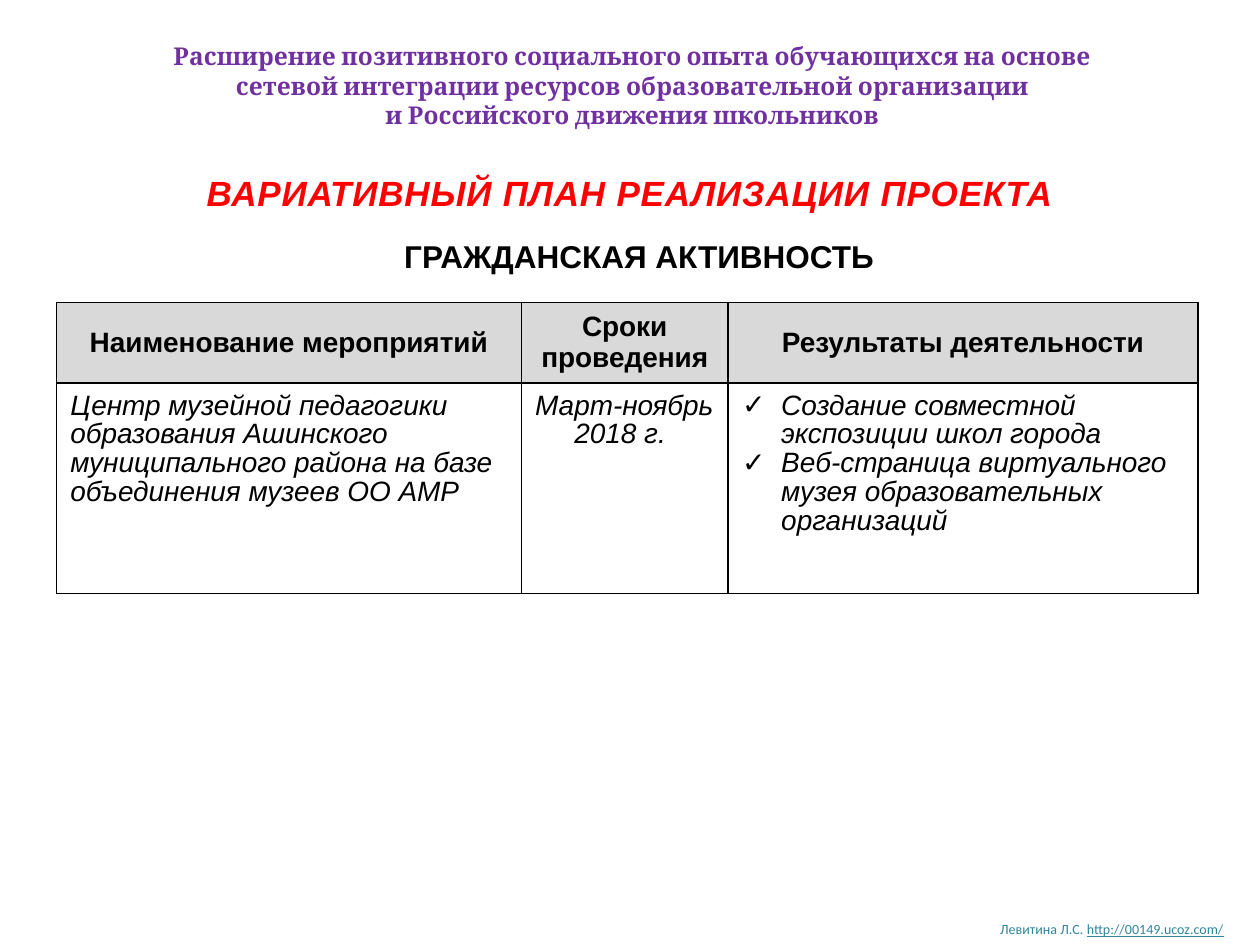
from dataclasses import dataclass, field

from lxml import etree
from pptx import Presentation
from pptx.dml.color import RGBColor
from pptx.enum.text import MSO_ANCHOR, MSO_AUTO_SIZE, PP_ALIGN
from pptx.oxml.ns import qn
from pptx.util import Cm, Pt

LEFT, MID = PP_ALIGN.LEFT, PP_ALIGN.CENTER
TOP, CENTER = MSO_ANCHOR.TOP, MSO_ANCHOR.MIDDLE
GROW = MSO_AUTO_SIZE.SHAPE_TO_FIT_TEXT
SIDES = ("a:lnL", "a:lnR", "a:lnT", "a:lnB")
BLACK, GRAY = "000000", "D9D9D9"
INDENT = 0.79


@dataclass
class Label:
    place: tuple[float, float, float, float]
    lines: list[str]
    style: dict = field(default_factory=dict)
    wrap: bool = True


@dataclass
class Entry:
    lines: list[str]
    style: dict = field(default_factory=dict)


LABELS = [
    Label((0.81, 0.71, 23.88, 2.06),
          ["Расширение позитивного социального опыта обучающихся на основе",
           "сетевой интеграции ресурсов образовательной организации",
           "и Российского движения школьников"],
          dict(size=14, face="Cambria", color="7030A0", bold=True, align=MID)),
    Label((0.89, 3.33, 23.6, 1.12),
          ["ВАРИАТИВНЫЙ ПЛАН РЕАЛИЗАЦИИ ПРОЕКТА"],
          dict(size=20, color="FF0000", bold=True, italic=True, align=MID,
               track=0.45)),
    Label((7.9, 4.65, 10.08, 1.02), ["ГРАЖДАНСКАЯ АКТИВНОСТЬ"],
          dict(size=18, bold=True), wrap=False),
]
HEADS = [Entry(["Наименование мероприятий"]),
         Entry(["Сроки", "проведения"]),
         Entry(["Результаты деятельности"])]
BODY = [
    Entry(["Центр музейной педагогики образования Ашинского "
           "муниципального района на базе объединения музеев ОО АМР"]),
    Entry(["Март-ноябрь 2018 г."], dict(hang=INDENT)),
    Entry(["Создание совместной экспозиции школ города",
           "Веб-страница виртуального музея образовательных организаций"],
          dict(hang=INDENT, mark="✓")),
]
COLS, ROWS = (9.37, 4.17, 9.47), (1.62, 4.24)


def paint(code: str) -> RGBColor:
    return RGBColor.from_string(code)


def indent(para, hang: float, mark: str) -> None:
    props = para._p.get_or_add_pPr()
    props.set("marL", str(Cm(hang)))
    props.set("indent", str(-Cm(hang)))
    if mark:
        tint = etree.SubElement(props, qn("a:buClr"))
        etree.SubElement(tint, qn("a:srgbClr"), val=BLACK)
        etree.SubElement(props, qn("a:buFont"), typeface="Arial")
        etree.SubElement(props, qn("a:buChar"), char=mark)


def add_run(para, text: str, *, size=16, face="Arial", color=BLACK,
            bold=False, italic=False, under=False, track=0.0) -> None:
    run = para.add_run()
    run.text = text
    font = run.font
    font.size, font.name = Pt(size), face
    font.bold, font.italic, font.underline = bold, italic, under
    font.color.rgb = paint(color)
    if track:
        run._r.get_or_add_rPr().set("spc", str(round(track * 100)))


def write(frame, lines: list[str], *, align=LEFT, space=1.0, hang=0.0,
          mark="", **style) -> None:
    for num, line in enumerate(lines):
        para = frame.add_paragraph() if num else frame.paragraphs[0]
        para.alignment, para.line_spacing = align, space
        if hang:
            indent(para, hang, mark)
        add_run(para, line, **style)


def add_label(slide, label: Label):
    frame = slide.shapes.add_textbox(*map(Cm, label.place)).text_frame
    frame.word_wrap, frame.auto_size = label.wrap, GROW
    write(frame, label.lines, **label.style)
    return frame


def add_edges(cell) -> None:
    props = cell._tc.get_or_add_tcPr()
    for side in SIDES:
        line = etree.SubElement(props, qn(side), w=str(Pt(1)))
        fill = etree.SubElement(line, qn("a:solidFill"))
        etree.SubElement(fill, qn("a:srgbClr"), val=BLACK)


def fill_row(cells, items: list[Entry], head: bool) -> None:
    base = (dict(bold=True, align=MID) if head
            else dict(italic=True, space=0.93))
    for cell, item in zip(cells, items):
        add_edges(cell)
        cell.margin_left = cell.margin_right = Cm(0.28)
        cell.margin_top = Cm(0.13 if head else 0.18)
        cell.margin_bottom = Cm(0.13)
        cell.vertical_anchor = CENTER if head else TOP
        if head:
            cell.fill.solid()
            cell.fill.fore_color.rgb = paint(GRAY)
        else:
            cell.fill.background()
        write(cell.text_frame, item.lines, **base, **item.style)


def add_plan(slide) -> None:
    table = slide.shapes.add_table(len(ROWS), len(COLS), Cm(1.14), Cm(6.1),
                                   Cm(sum(COLS)), Cm(sum(ROWS))).table
    table.first_row = table.horz_banding = False
    for col, width in zip(table.columns, COLS):
        col.width = Cm(width)
    for row, height in zip(table.rows, ROWS):
        row.height = Cm(height)
    fill_row(table.rows[0].cells, HEADS, True)
    fill_row(table.rows[1].cells, BODY, False)


def main() -> None:
    deck = Presentation()
    deck.slide_width, deck.slide_height = Cm(25.4), Cm(19.05)
    slide = deck.slides.add_slide(deck.slide_layouts[6])
    small = dict(size=8, face="Calibri", color="31859C")
    foot = add_label(slide, Label((19.91, 18.44, 5.13, 0.61),
                                  ["Левитина Л.С. "], small, wrap=False))
    add_run(foot.paragraphs[0], "http://00149.ucoz.com/", under=True, **small)
    for label in LABELS:
        add_label(slide, label)
    add_plan(slide)
    deck.save("out.pptx")


if __name__ == "__main__":
    main()
